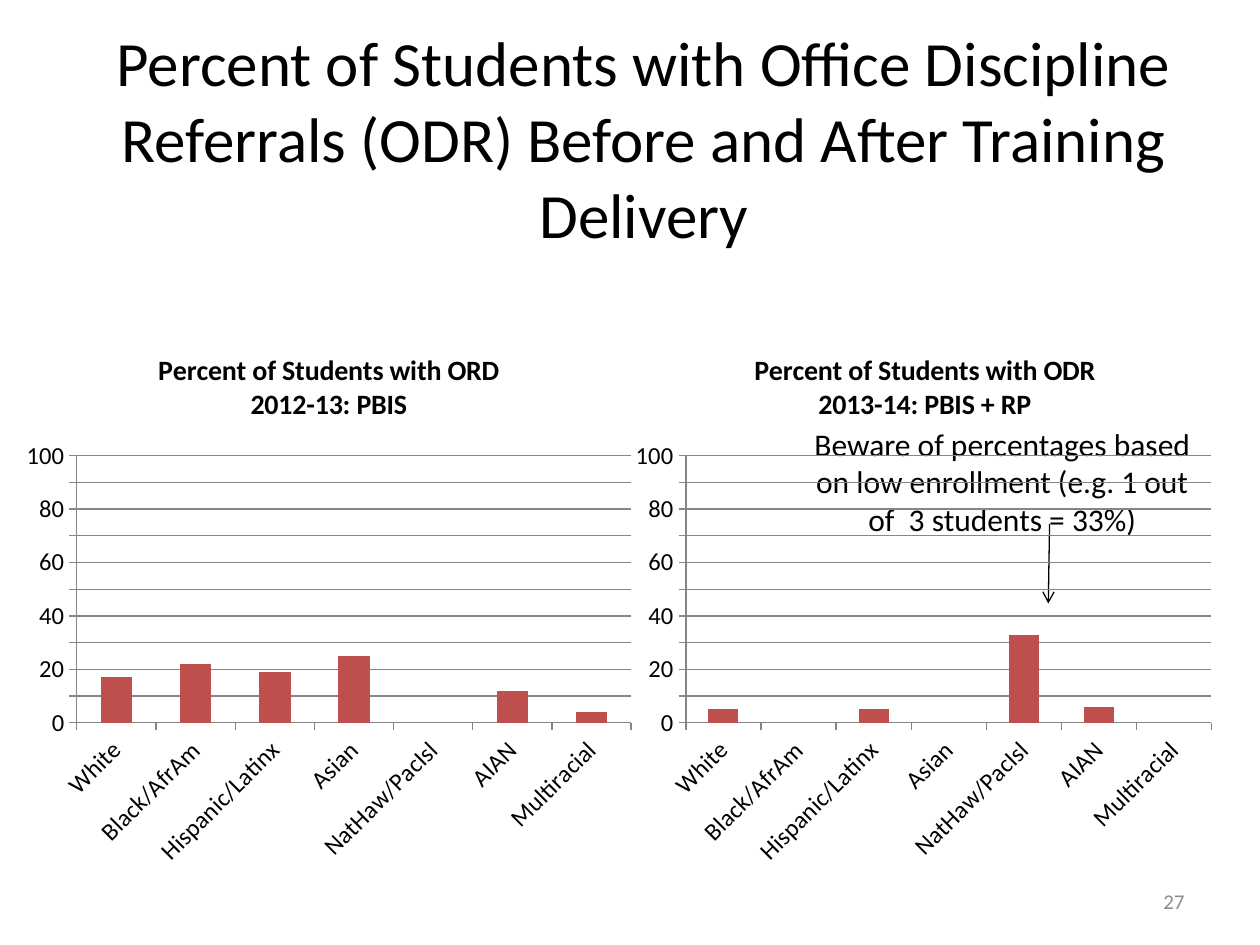
from dataclasses import dataclass

from lxml.etree import SubElement
from pptx import Presentation
from pptx.chart.data import CategoryChartData
from pptx.dml.color import RGBColor
from pptx.enum.chart import XL_CHART_TYPE, XL_TICK_MARK
from pptx.enum.shapes import MSO_CONNECTOR
from pptx.enum.text import MSO_ANCHOR, PP_ALIGN
from pptx.oxml import parse_xml
from pptx.oxml.ns import nsdecls, qn
from pptx.slide import Slide
from pptx.util import Inches, Pt

FONT = "Calibri"
BLACK = RGBColor(0, 0, 0)
PAGE_GRAY = RGBColor(0x8C, 0x8C, 0x8C)
GRID_GRAY = RGBColor(0x86, 0x86, 0x86)
BAR_RED = RGBColor(0xC0, 0x50, 0x4D)
GROUPS = ("White", "Black/AfrAm", "Hispanic/Latinx", "Asian",
          "NatHaw/PacIsl", "AIAN", "Multiracial")
PLOT_LAYOUT = {"x": 0.1, "y": 0.23, "w": 0.88, "h": 0.49}


@dataclass(frozen=True)
class Label:
    text: str
    left: float
    top: float
    width: float
    height: float
    size: int
    align: PP_ALIGN = PP_ALIGN.CENTER
    color: RGBColor = BLACK
    anchor: MSO_ANCHOR = MSO_ANCHOR.TOP


@dataclass(frozen=True)
class ReferralChart:
    title: tuple[str, str]
    left: float
    width: float
    percents: tuple[int, ...]


LABELS = (
    Label("27", 7.17, 6.95, 2.33, 0.4, 12, PP_ALIGN.RIGHT, PAGE_GRAY, MSO_ANCHOR.MIDDLE),
    Label("Percent of Students with Office Discipline Referrals (ODR) "
          "Before and After Training Delivery", 0.39, 0.14, 9.44, 1.85, 36),
    Label("Beware of percentages based on low enrollment "
          "(e.g. 1 out of  3 students = 33%)", 6.25, 3.32, 3.41, 1.01, 18),
)
CHARTS = (
    ReferralChart(("Percent of Students with ORD", "2012-13: PBIS"),
                  0.11, 5, (17, 22, 19, 25, 0, 12, 4)),
    ReferralChart(("Percent of Students with ODR", "2013-14: PBIS + RP"),
                  4.97, 4.74, (5, 0, 5, 0, 33, 6, 0)),
)


def style_font(font, size: int, color: RGBColor = BLACK, bold: bool = False) -> None:
    font.name = FONT
    font.size = Pt(size)
    font.bold = bold
    font.color.rgb = color


def add_label(page: Slide, label: Label) -> None:
    box = page.shapes.add_textbox(Inches(label.left), Inches(label.top),
                                  Inches(label.width), Inches(label.height))
    frame = box.text_frame
    frame.word_wrap = True
    frame.vertical_anchor = label.anchor
    para = frame.paragraphs[0]
    para.alignment = label.align
    span = para.add_run()
    span.text = label.text
    style_font(span.font, label.size, label.color)


def add_arrow(page: Slide) -> None:
    arrow = page.shapes.add_connector(MSO_CONNECTOR.STRAIGHT, Inches(8.33), Inches(4.16),
                                      Inches(8.32), Inches(4.79))
    arrow.line.color.rgb = BLACK
    arrow.line.width = Pt(0.75)
    SubElement(arrow.line._get_or_add_ln(), qn("a:tailEnd"), type="arrow")
    SubElement(arrow._element.spPr, qn("a:effectLst"))


def clear_background(chart) -> None:
    fill = f"<c:spPr {nsdecls('c', 'a')}><a:noFill/><a:ln><a:noFill/></a:ln></c:spPr>"
    space = chart._chartSpace
    space.find(qn("c:chart")).addnext(parse_xml(fill))
    space.chart.plotArea.append(parse_xml(fill))


def place_plot(chart) -> None:
    area = chart._chartSpace.chart.plotArea
    for old in area.findall(qn("c:layout")):
        area.remove(old)
    values = {"layoutTarget": "inner", "xMode": "edge", "yMode": "edge", **PLOT_LAYOUT}
    parts = "".join(f'<c:{name} val="{value}"/>' for name, value in values.items())
    area.insert(0, parse_xml(f"<c:layout {nsdecls('c')}><c:manualLayout>{parts}"
                             "</c:manualLayout></c:layout>"))


def add_referral_chart(page: Slide, item: ReferralChart) -> None:
    data = CategoryChartData()
    data.categories = GROUPS
    data.add_series("Series 1", item.percents)
    chart = page.shapes.add_chart(XL_CHART_TYPE.COLUMN_CLUSTERED, Inches(item.left),
                                  Inches(2.62), Inches(item.width), Inches(4.33), data).chart
    style_font(chart.font, 10)
    chart.has_legend = False
    frame = chart.chart_title.text_frame
    for index, text in enumerate(item.title):
        para = frame.add_paragraph() if index else frame.paragraphs[0]
        span = para.add_run()
        span.text = text
        style_font(span.font, 16, bold=True)

    plot = chart.plots[0]
    plot.gap_width = 150
    plot.vary_by_categories = False
    fill = plot.series[0].format.fill
    fill.solid()
    fill.fore_color.rgb = BAR_RED

    for axis in (chart.category_axis, chart.value_axis):
        style_font(axis.tick_labels.font, 14)
        axis.major_tick_mark = XL_TICK_MARK.OUTSIDE
        axis.format.line.color.rgb = GRID_GRAY
    chart.category_axis._element.txPr.bodyPr.set("rot", "-2700000")
    scale = chart.value_axis
    scale.minimum_scale = 0
    scale.maximum_scale = 100
    scale.major_unit = 10
    scale.tick_labels.number_format = "0"
    scale.tick_labels.number_format_is_linked = False
    scale.has_major_gridlines = True
    scale.major_gridlines.format.line.color.rgb = GRID_GRAY
    place_plot(chart)
    clear_background(chart)


def main() -> None:
    deck = Presentation()
    deck.slide_width = Inches(10)
    deck.slide_height = Inches(7.5)
    page = deck.slides.add_slide(deck.slide_layouts[6])
    for label in LABELS:
        add_label(page, label)
    add_arrow(page)
    for item in CHARTS:
        add_referral_chart(page, item)
    deck.save("out.pptx")


if __name__ == "__main__":
    main()
